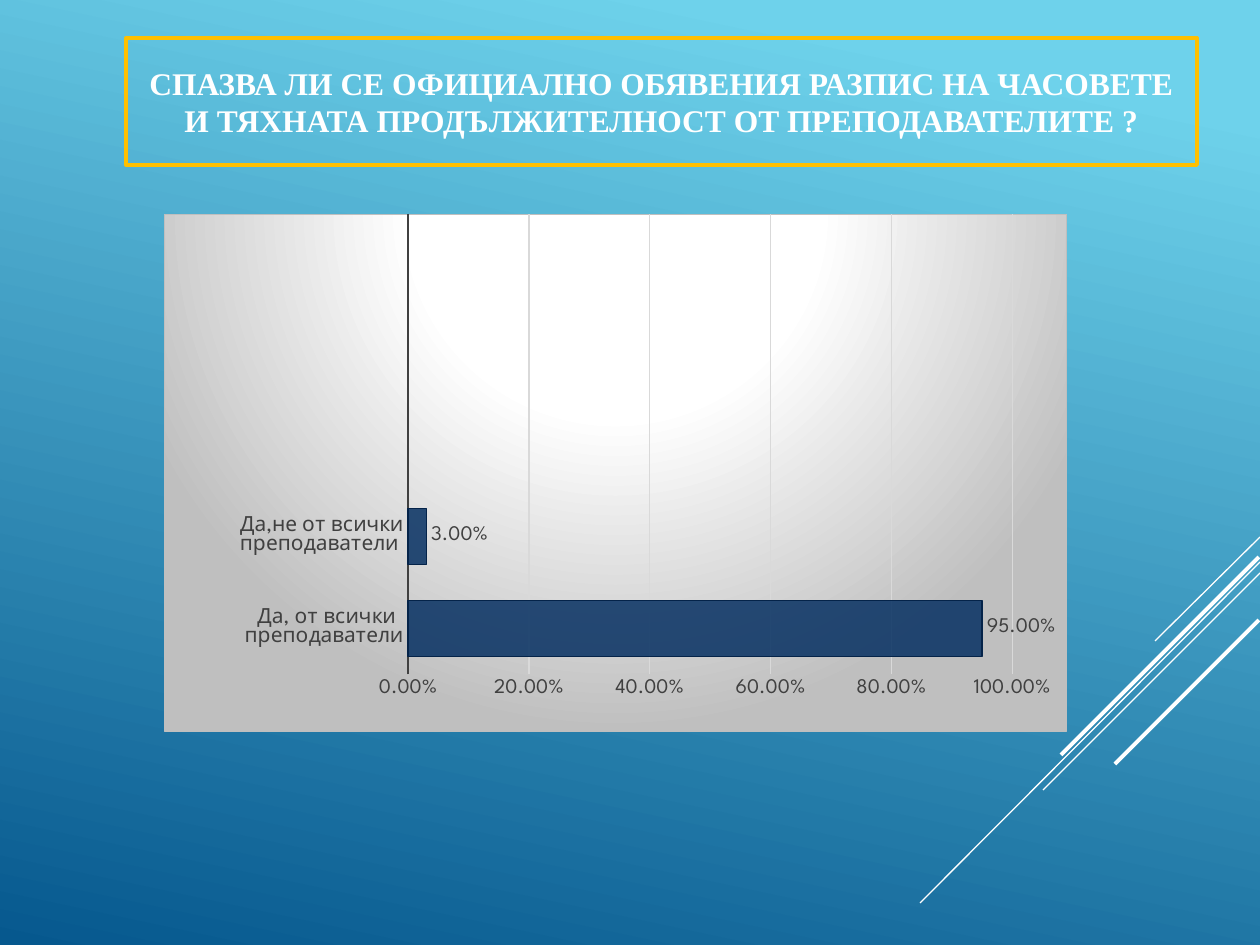
import pptx
import pptx.chart.data
import pptx.dml.color
import pptx.enum.chart
import pptx.enum.shapes
import pptx.enum.text
import pptx.oxml
import pptx.oxml.ns
import pptx.util

RGB = pptx.dml.color.RGBColor
WHITE = RGB(0xFF, 0xFF, 0xFF)
GOLD = RGB(0xFF, 0xC0, 0x00)
SKY = RGB(0x6E, 0xD2, 0xEB)
OCEAN = RGB(0x06, 0x58, 0x8E)
NAVY = RGB(0x05, 0x2F, 0x61)
DARK_NAVY = RGB(0x04, 0x23, 0x49)
DARK_GREY = RGB(0x40, 0x40, 0x40)
GREY = RGB(0xBF, 0xBF, 0xBF)
LIGHT_GREY = RGB(0xD9, 0xD9, 0xD9)

CHART_FONT = "League Spartan"
NS = pptx.oxml.ns.nsdecls("a", "c")
TITLE = ("СПАЗВА ЛИ СЕ ОФИЦИАЛНО ОБЯВЕНИЯ РАЗПИС НА ЧАСОВЕТЕ "
         "И ТЯХНАТА ПРОДЪЛЖИТЕЛНОСТ ОТ ПРЕПОДАВАТЕЛИТЕ ?")
ANSWERS = [
    (" Да, от всички преподаватели", 0.95),
    (" Да,не от всички преподаватели", 0.03),
    ("", None),
    ("", None),
    ("", None),
]
# x1, y1, x2, y2 in px, then width in points
RAYS = [
    (1260, 537, 1155, 641, 0.75),
    (1260, 562, 920, 903, 0.75),
    (1260, 573, 1043, 790, 0.75),
    (1259, 557, 1061, 755, 2.25),
    (1259, 620, 1115, 764, 2.25),
]


def px(n):
    return pptx.util.Emu(round(n * 914400 / 126))


def set_line(line, color, width):
    line.color.rgb = color
    line.width = pptx.util.Pt(width)


def set_font(font, name, size, color, bold=False):
    font.name = name
    font.size = pptx.util.Pt(size)
    font.color.rgb = color
    font.bold = bold


def gradient(stops, direction):
    """Gradient fill XML from (percent, colour) stops and a direction element."""
    gs = "".join(f'<a:gs pos="{pos * 1000}"><a:srgbClr val="{color}"/></a:gs>'
                 for pos, color in stops)
    return (f'<a:gradFill {NS} rotWithShape="1"><a:gsLst>{gs}</a:gsLst>'
            f'{direction}</a:gradFill>')


def set_background(s):
    s.background.fill.solid()
    props = s.background._cSld.xpath("p:bg/p:bgPr")[0]
    fill = gradient([(10, SKY), (100, OCEAN)],
                    f'<a:lin ang="{102 * 60000}" scaled="0"/>')
    props.replace(props[0], pptx.oxml.parse_xml(fill))


def add_ray(s, x1, y1, x2, y2, width):
    ray = s.shapes.add_connector(pptx.enum.shapes.MSO_CONNECTOR.STRAIGHT,
                                 px(x1), px(y1), px(x2), px(y2))
    set_line(ray.line, WHITE, width)
    ray._element.spPr.append(pptx.oxml.parse_xml(f"<a:effectLst {NS}/>"))


def add_framed_text(s, text, left, top, width, height, *, font, size, color,
                    frame, frame_width, bold=False, space_before=0):
    sp = s.shapes.add_shape(pptx.enum.shapes.MSO_SHAPE.RECTANGLE,
                            px(left), px(top), px(width), px(height))
    sp.shadow.inherit = False
    sp.fill.background()
    set_line(sp.line, frame, frame_width)
    tf = sp.text_frame
    tf.word_wrap = True
    tf.vertical_anchor = pptx.enum.text.MSO_ANCHOR.MIDDLE
    p = tf.paragraphs[0]
    p.alignment = pptx.enum.text.PP_ALIGN.CENTER
    p.space_before = pptx.util.Pt(space_before)
    r = p.add_run()
    r.text = text
    set_font(r.font, font, size, color, bold)


def style_axes(chart):
    for axis in (chart.category_axis, chart.value_axis):
        axis.major_tick_mark = pptx.enum.chart.XL_TICK_MARK.NONE
        axis.minor_tick_mark = pptx.enum.chart.XL_TICK_MARK.NONE
        set_font(axis.tick_labels.font, CHART_FONT, 12, DARK_GREY)
    set_line(chart.category_axis.format.line, DARK_GREY, 1.5)

    values = chart.value_axis
    values.minimum_scale, values.maximum_scale, values.major_unit = 0, 1, 0.2
    values.format.line.fill.background()
    set_line(values.major_gridlines.format.line, LIGHT_GREY, 0.75)
    values.tick_labels.number_format = "0.00%"
    values.tick_labels.number_format_is_linked = False


def style_bars(plot):
    plot.gap_width = 65
    plot.vary_by_categories = False
    bars = plot.series[0]
    bars.format.fill.solid()
    bars.format.fill.fore_color.rgb = NAVY
    set_line(bars.format.line, DARK_NAVY, 0.75)
    color = bars.format.fill._xPr.xpath("a:solidFill/a:srgbClr")[0]
    color.append(pptx.oxml.parse_xml(f'<a:alpha {NS} val="85000"/>'))

    labels = bars.data_labels
    labels.show_value = True
    labels.number_format = "0.00%"
    labels.number_format_is_linked = False
    labels.position = pptx.enum.chart.XL_LABEL_POSITION.OUTSIDE_END
    set_font(labels.font, CHART_FONT, 12, DARK_GREY)


def place_plot(chart, x, y, w, h):
    """Fix the inner plot area as fractions of the chart."""
    parts = "".join(f'<c:{tag} val="{val}"/>' for tag, val in (
        ("layoutTarget", "inner"), ("xMode", "edge"), ("yMode", "edge"),
        ("x", x), ("y", y), ("w", w), ("h", h)))
    area = chart._chartSpace.chart.plotArea
    for old in area.xpath("c:layout"):
        area.remove(old)
    area.insert(0, pptx.oxml.parse_xml(
        f"<c:layout {NS}><c:manualLayout>{parts}</c:manualLayout></c:layout>"))


def fill_chart(chart):
    fill = gradient([(0, WHITE), (39, WHITE), (100, GREY)],
                    '<a:path path="circle"><a:fillToRect l="50000" t="-80000" '
                    'r="50000" b="180000"/></a:path>')
    border = (f'<a:ln w="9525"><a:solidFill><a:srgbClr val="{GREY}"/>'
              '</a:solidFill></a:ln>')
    chart._chartSpace.chart.addnext(pptx.oxml.parse_xml(
        f"<c:spPr {NS}>{fill}{border}</c:spPr>"))


def add_answer_chart(s, left, top, width, height):
    data = pptx.chart.data.CategoryChartData(number_format="0.00%")
    data.categories = [answer for answer, _ in ANSWERS]
    data.add_series("Series 1", [share for _, share in ANSWERS])
    chart = s.shapes.add_chart(pptx.enum.chart.XL_CHART_TYPE.BAR_CLUSTERED,
                               px(left), px(top), px(width), px(height),
                               data).chart
    chart.has_legend = False
    chart.has_title = False
    set_font(chart.font, CHART_FONT, 10, WHITE)
    style_axes(chart)
    style_bars(chart.plots[0])
    place_plot(chart, 0.27, 0, 0.67, 0.89)
    fill_chart(chart)


def main():
    prs = pptx.Presentation()
    prs.slide_width, prs.slide_height = px(1260), px(945)
    s = prs.slides.add_slide(prs.slide_layouts[6])
    set_background(s)
    for ray in RAYS:
        add_ray(s, *ray)
    add_framed_text(s, TITLE, 126, 38, 1071, 127, font="Times New Roman",
                    size=18, color=WHITE, bold=True, space_before=5.8,
                    frame=GOLD, frame_width=2.25)
    add_answer_chart(s, 164, 213, 903, 519)
    prs.save("out.pptx")


if __name__ == "__main__":
    main()
